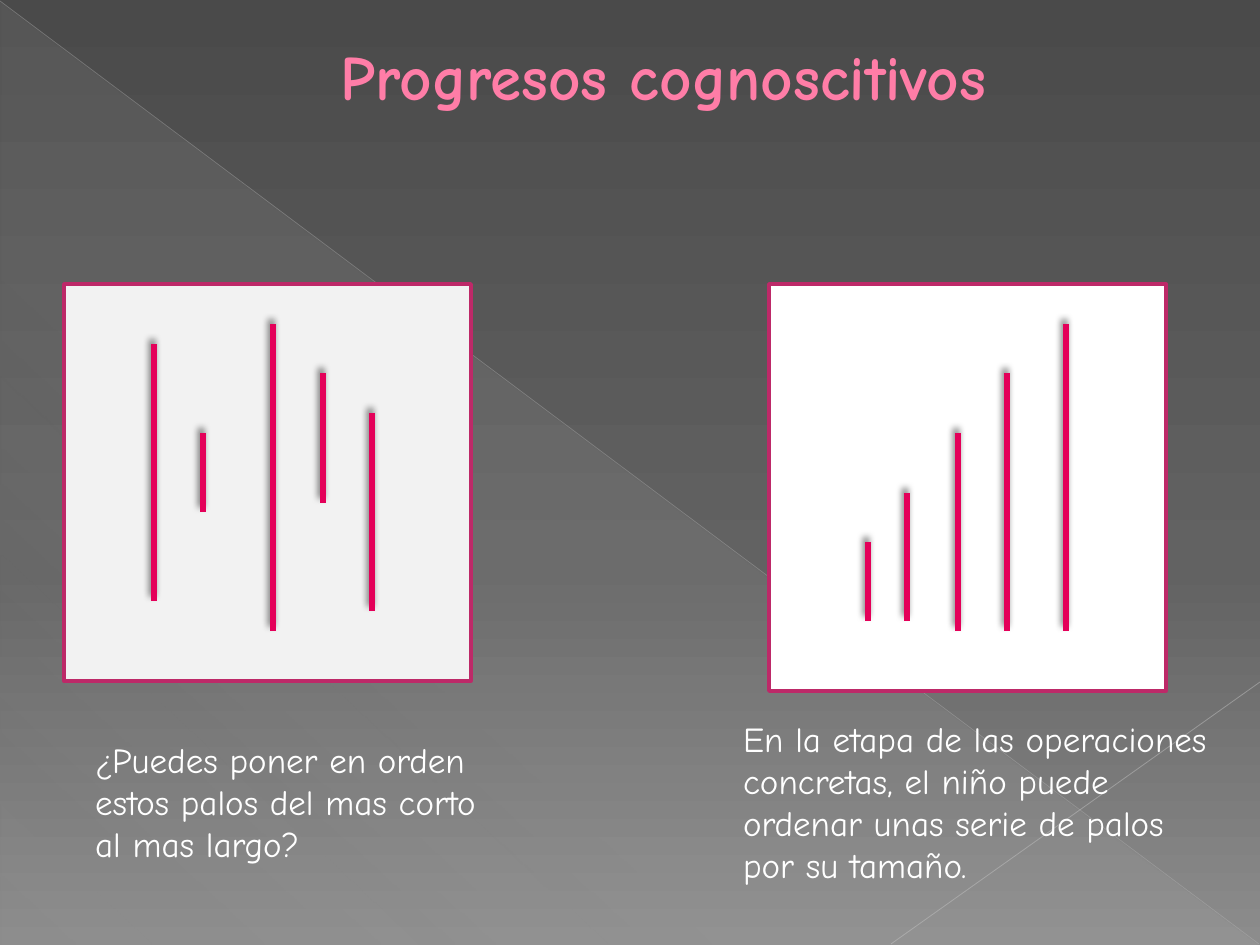
"""Build the slide on ordering sticks by length."""
from lxml import etree
from pptx import Presentation, util as u
from pptx.dml.color import RGBColor
from pptx.enum import shapes, text
from pptx.oxml.ns import qn

PX = 914400 / 126
FONT = "Comic Neue"
WHITE = RGBColor(0xFF, 0xFF, 0xFF)
PALE = RGBColor(0xF2, 0xF2, 0xF2)
PINK = RGBColor(0xFF, 0x7D, 0xA7)
BORDER = RGBColor(0xBD, 0x29, 0x68)
STICK = RGBColor(0xE4, 0x00, 0x59)
GREY = RGBColor(0xBF, 0xBF, 0xBF)
SILVER = RGBColor(0xC6, 0xC6, 0xC6)
BLACK = RGBColor(0, 0, 0)

TITLE = "Progresos cognoscitivos"
BACKDROP = [(0, "4A4A4A", 100), (60, "626262", 100), (100, "8C8C8C", 100)]
SHEEN = [(0, "D2D2D2", 10), (70, "D2D2D2", 8), (100, "D2D2D2", 1)]
RAYS = [((0, 1, 1259, 944), GREY, 0.39, 35), ((1260, 682, 891, 944), SILVER, 0.47, 45)]
PANELS = [
    {"box": (769, 284, 397, 407), "fill": WHITE,
     "sticks": [(868, 542, 621), (907, 493, 621), (958, 433, 631),
                (1007, 373, 631), (1066, 324, 631)],
     "caption": "En la etapa de las operaciones concretas, el niño puede "
                "ordenar unas serie de palos por su tamaño.",
     "caption_box": (669, 711, 566, 204)},
    {"box": (64, 284, 407, 397), "fill": PALE,
     "sticks": [(154, 344, 601), (203, 433, 512), (273, 324, 631),
                (323, 373, 503), (372, 413, 611)],
     "caption": "¿Puedes poner en orden estos palos del mas corto al mas largo?",
     "caption_box": (21, 732, 496, 204)},
]


def emu(values):
    return [u.Emu(round(v * PX)) for v in values]


def sub(parent, tag, **attrs):
    return etree.SubElement(parent, qn(tag), {k: str(v) for k, v in attrs.items()})


def add_color(parent, color, alpha):
    sub(sub(parent, "a:srgbClr", val=color), "a:alpha", val=alpha * 1000)


def set_gradient(fill, element, stops, angle):
    fill.gradient()
    grad = next(element.iter(qn("a:gradFill")))
    for child in list(grad):
        grad.remove(child)
    stop_list = sub(grad, "a:gsLst")
    for pos, color, alpha in stops:
        add_color(sub(stop_list, "a:gs", pos=pos * 1000), color, alpha)
    sub(grad, "a:lin", ang=angle * 60000, scaled=0)


def add_line(s, ends, color, width):
    line = s.shapes.add_connector(shapes.MSO_CONNECTOR.STRAIGHT, *emu(ends))
    line.line.color.rgb = color
    line.line.width = u.Pt(width)
    return line, sub(line._element.spPr, "a:effectLst")


def add_ray(s, ends, color, width, alpha):
    line, _ = add_line(s, ends, color, width)
    clr = next(line._element.spPr.iter(qn("a:srgbClr")))
    sub(clr, "a:alpha", val=alpha * 1000)


def add_stick(s, x, top, bottom):
    _, effects = add_line(s, (x, top, x, bottom), STICK, 3)
    shadow = sub(effects, "a:outerShdw", blurRad=u.Pt(4), dist=u.Pt(3),
                 dir=245 * 60000, algn="ctr", rotWithShape=0)
    add_color(shadow, BLACK, 60)


def add_shape(s, kind, box):
    sp = s.shapes.add_shape(kind, *emu(box))
    sp.shadow.inherit = False
    return sp


def write(tf, words, color, indent, **font):
    tf.word_wrap = True
    p = tf.paragraphs[0]
    p._p.get_or_add_pPr().set("marL", str(u.Inches(indent)))
    r = p.add_run()
    r.text = words
    for name, value in {"name": FONT, **font}.items():
        setattr(r.font, name, value)
    r.font.color.rgb = color
    return p


def main():
    prs = Presentation()
    prs.slide_width, prs.slide_height = emu((1260, 945))
    s = prs.slides.add_slide(prs.slide_layouts[5])
    set_gradient(s.background.fill, s._element, BACKDROP, 90)

    sheen = add_shape(s, shapes.MSO_SHAPE.RIGHT_TRIANGLE, (1, 2, 1258, 943))
    set_gradient(sheen.fill, sheen._element, SHEEN, 133)
    sheen.line.fill.background()
    for ray in RAYS:
        add_ray(s, *ray)

    title = s.shapes.title
    title.left, title.top, title.width, title.height = emu((0, 26, 1260, 98))
    title.text_frame.vertical_anchor = text.MSO_ANCHOR.MIDDLE
    p = write(title.text_frame, TITLE, PINK, 0.53, size=u.Pt(36), bold=True)
    p.alignment = text.PP_ALIGN.CENTER

    for panel in PANELS:
        sp = add_shape(s, shapes.MSO_SHAPE.RECTANGLE, panel["box"])
        sp.fill.solid()
        sp.fill.fore_color.rgb = panel["fill"]
        sp.line.color.rgb = BORDER
        sp.line.width = u.Pt(2)
        for stick in panel["sticks"]:
            add_stick(s, *stick)
        caption = s.shapes.add_textbox(*emu(panel["caption_box"]))
        p = write(caption.text_frame, panel["caption"], WHITE, 0.49, size=u.Pt(20))
        p.space_before = u.Pt(4)

    prs.save("out.pptx")


if __name__ == "__main__":
    main()
